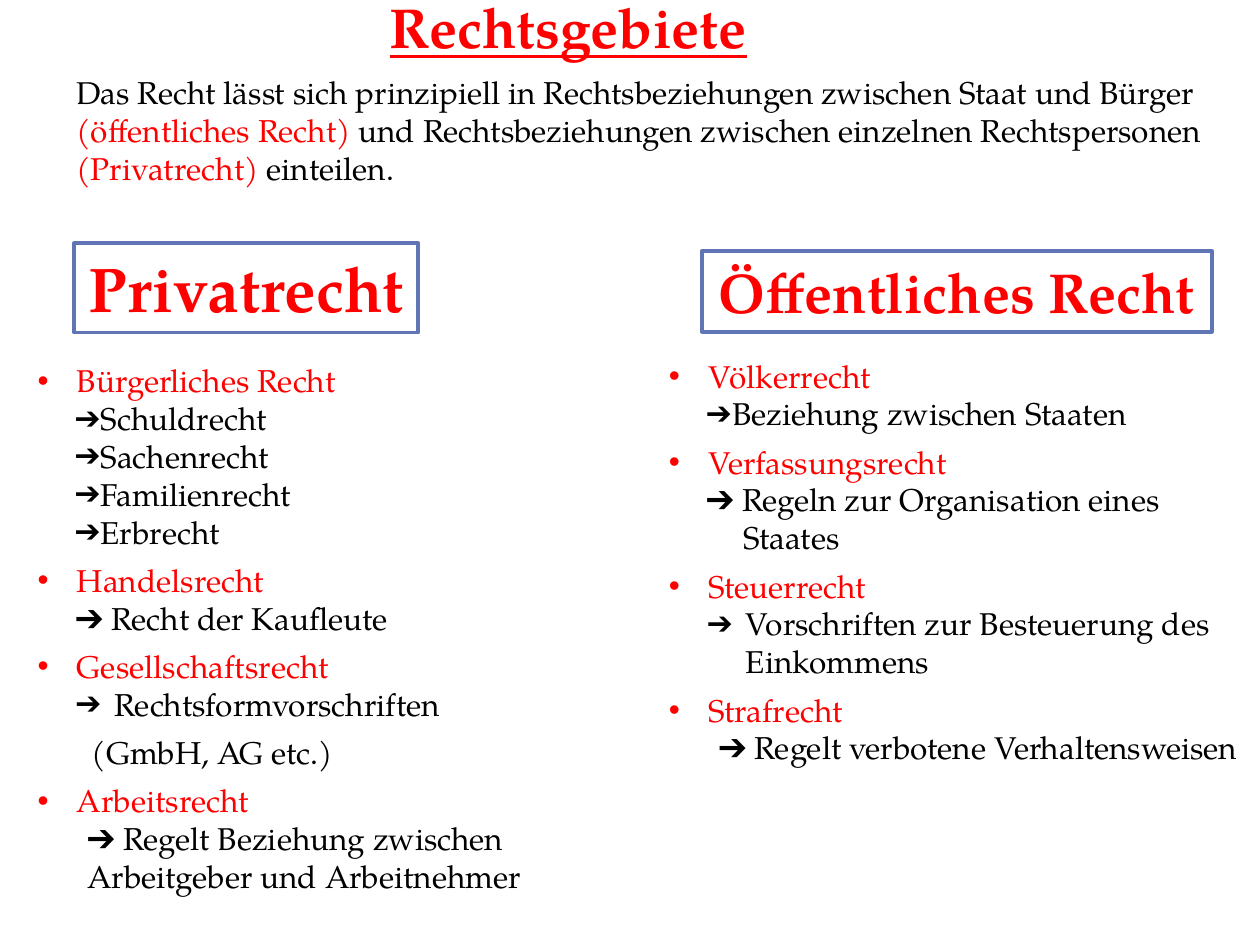
from pptx import Presentation
from pptx.dml.color import RGBColor
from pptx.enum.shapes import MSO_SHAPE
from pptx.enum.text import MSO_ANCHOR, MSO_AUTO_SIZE, PP_ALIGN
from pptx.util import Pt
from lxml.etree import SubElement
from pptx.oxml.ns import qn

RED = RGBColor(0xFF, 0, 0)
BLACK = RGBColor(0, 0, 0)
BLUE = RGBColor(0x60, 0x76, 0xB4)
FACE = "TeX Gyre Pagella"

# Content
TITLE = "Rechtsgebiete"
INTRO = [
    ("Das Recht lässt sich prinzipiell in Rechtsbeziehungen zwischen Staat und Bürger ", BLACK),
    ("(öffentliches Recht) ", RED),
    ("und Rechtsbeziehungen zwischen einzelnen Rechtspersonen ", BLACK),
    ("(Privatrecht) ", RED),
    ("einteilen.", BLACK),
]
# Heading boxes: text, size, (left, top, width, height)
HEADS = [
    ("Privatrecht", 36, (42.5, 139, 196.5, 51)),
    ("Öffentliches Recht", 32, (401, 143.5, 291.5, 46)),
]
# Columns: place, then (kind, text) for each paragraph
LISTS = [
    ((14.4, 203, 345.6, 315.4), [
        ("area", "Bürgerliches Recht"),
        ("item", "Schuldrecht"),
        ("item", "Sachenrecht"),
        ("item", "Familienrecht"),
        ("item", "Erbrecht"),
        ("area", "Handelsrecht"),
        ("plain", "➔ Recht der Kaufleute"),
        ("area", "Gesellschaftsrecht"),
        ("wide", "Rechtsformvorschriften"),
        ("note", "(GmbH, AG etc.)"),
        ("area", "Arbeitsrecht"),
        ("inset", "➔ Regelt Beziehung zwischen Arbeitgeber und Arbeitnehmer"),
    ]),
    ((375.2, 200.2, 345.6, 243.4), [
        ("area", "Völkerrecht"),
        ("item", "Beziehung zwischen Staaten"),
        ("area", "Verfassungsrecht"),
        ("hang", "➔ Regeln zur Organisation eines Staates"),
        ("area", "Steuerrecht"),
        ("wide", "Vorschriften zur Besteuerung des Einkommens"),
        ("area", "Strafrecht"),
        ("inset", "➔ Regelt verbotene Verhaltensweisen"),
    ]),
]
# Paragraph kinds: bullet, left margin, first-line indent
KINDS = {
    "area": ("•", 22.5, -22.5),
    "item": ("➔", 22.5, -1.5),
    "wide": ("➔", 44, -22.5),
    "plain": (None, 21.6, 0),
    "note": (None, 31, 0),
    "inset": (None, 28.35, 0),
    "hang": (None, 42.5, -21.25),
}


def put(obj, vals):
    for key, val in vals.items():
        setattr(obj, key, val)


def place(shape, box):
    put(shape, dict(zip(("left", "top", "width", "height"), map(Pt, box))))


def write(para, text, color, size=18, **more):
    run = para.add_run()
    run.text = text
    put(run.font, {"name": FACE, "size": Pt(size), **more})
    run.font.color.rgb = color


def head(shape, text, size, box, **more):
    place(shape, box)
    put(shape.text_frame, {"word_wrap": False, "vertical_anchor": MSO_ANCHOR.TOP,
                           "auto_size": MSO_AUTO_SIZE.SHAPE_TO_FIT_TEXT})
    para = shape.text_frame.paragraphs[0]
    para.alignment = PP_ALIGN.CENTER
    write(para, text, RED, size, bold=True, **more)


def add_text(slide, box):
    shape = slide.shapes.add_textbox(*map(Pt, box))
    put(shape.text_frame, {"word_wrap": True,
                           "auto_size": MSO_AUTO_SIZE.SHAPE_TO_FIT_TEXT})
    return shape.text_frame


def indent(para, kind):
    mark, left, first = KINDS[kind]
    props = para._p.get_or_add_pPr()
    props.set("marL", str(Pt(left)))
    props.set("indent", str(Pt(first)))
    if mark:
        if mark == "•":
            SubElement(props, qn("a:buFont")).set("typeface", "Arial")
        SubElement(props, qn("a:buChar")).set("char", mark)


deck = Presentation()
put(deck, {"slide_width": Pt(720), "slide_height": Pt(540)})
slide = deck.slides.add_slide(deck.slide_layouts[5])

# Title and introduction
head(slide.shapes.title, TITLE, 32, (214.5, -8, 220.5, 46), underline=True)
frame = add_text(slide, (36.7, 38.2, 740, 72.7))
for text, color in INTRO:
    write(frame.paragraphs[0], text, color)

# Framed headings
for text, size, box in HEADS:
    shape = slide.shapes.add_shape(MSO_SHAPE.RECTANGLE, *map(Pt, box))
    shape.shadow.inherit = False
    shape.fill.background()
    shape.line.color.rgb = BLUE
    shape.line.width = Pt(2.25)
    head(shape, text, size, box)

# Lists: a gap follows each group, none follows an area or joins two items
for box, rows in LISTS:
    frame = add_text(slide, box)
    for num, (kind, text) in enumerate(rows):
        para = frame.add_paragraph() if num else frame.paragraphs[0]
        after = rows[num + 1][0] if num + 1 < len(rows) else None
        tight = kind == "area" or after in ("item", None)
        para.space_after = Pt(0 if tight else 6)
        indent(para, kind)
        write(para, text, RED if kind == "area" else BLACK)

deck.save("out.pptx")
